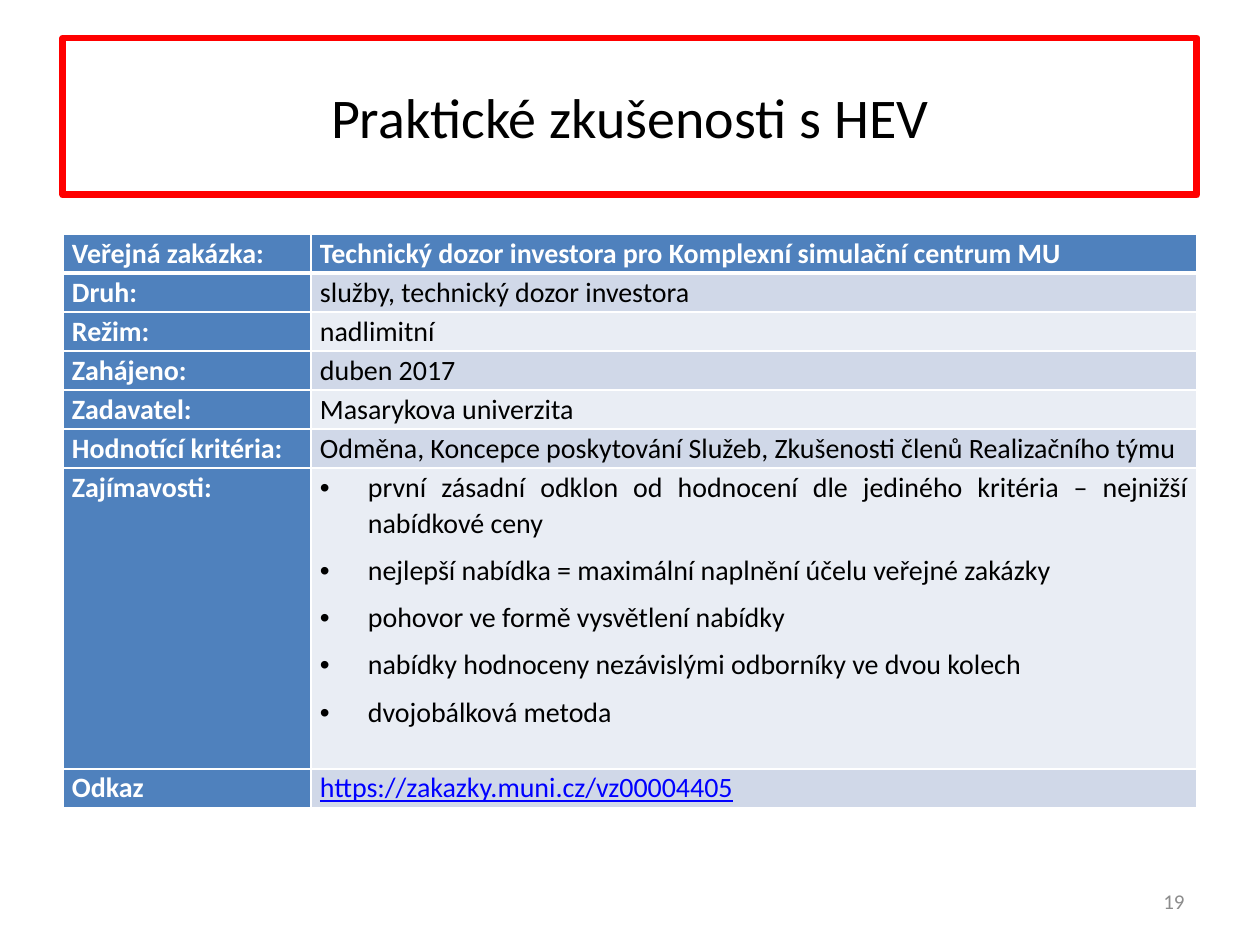
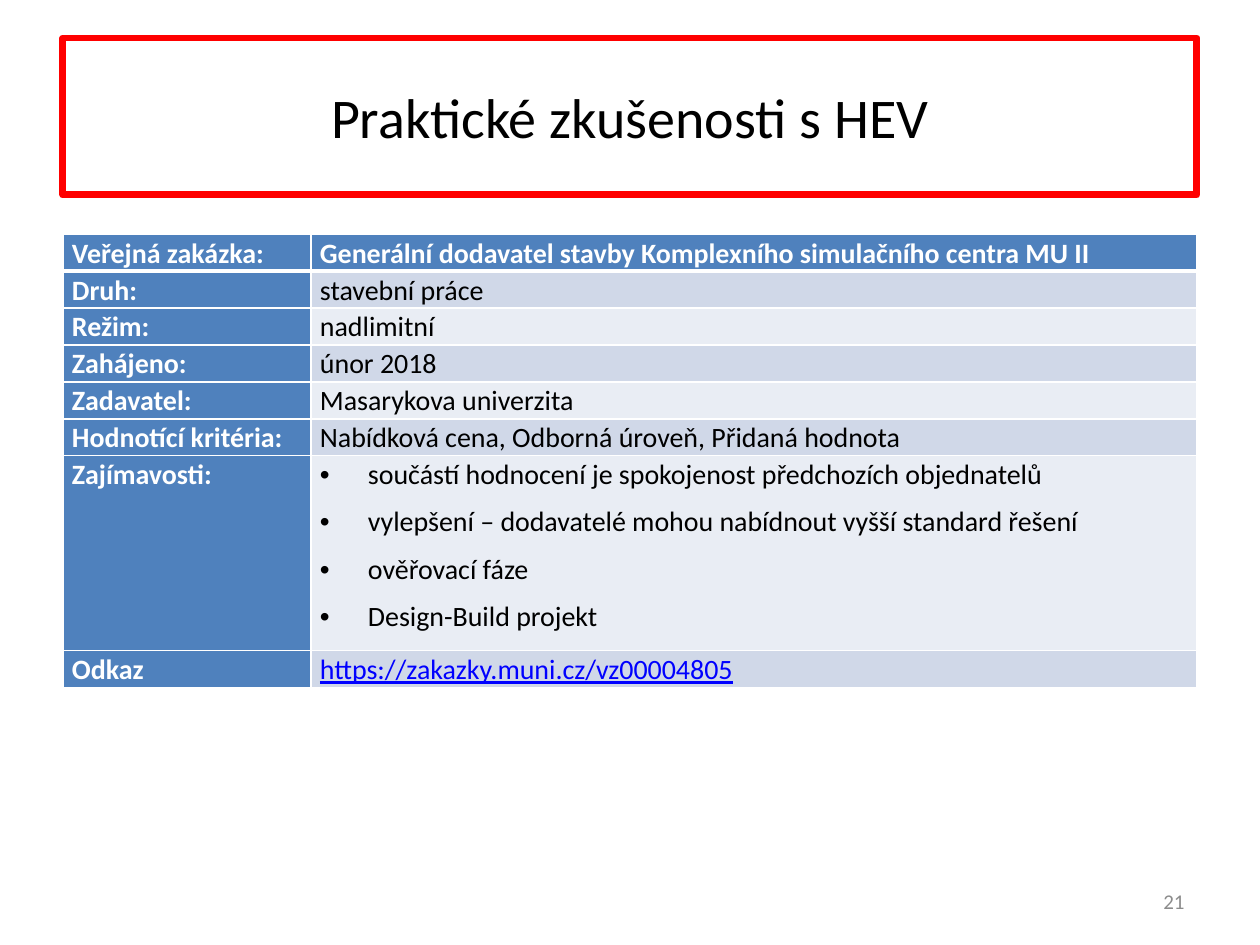
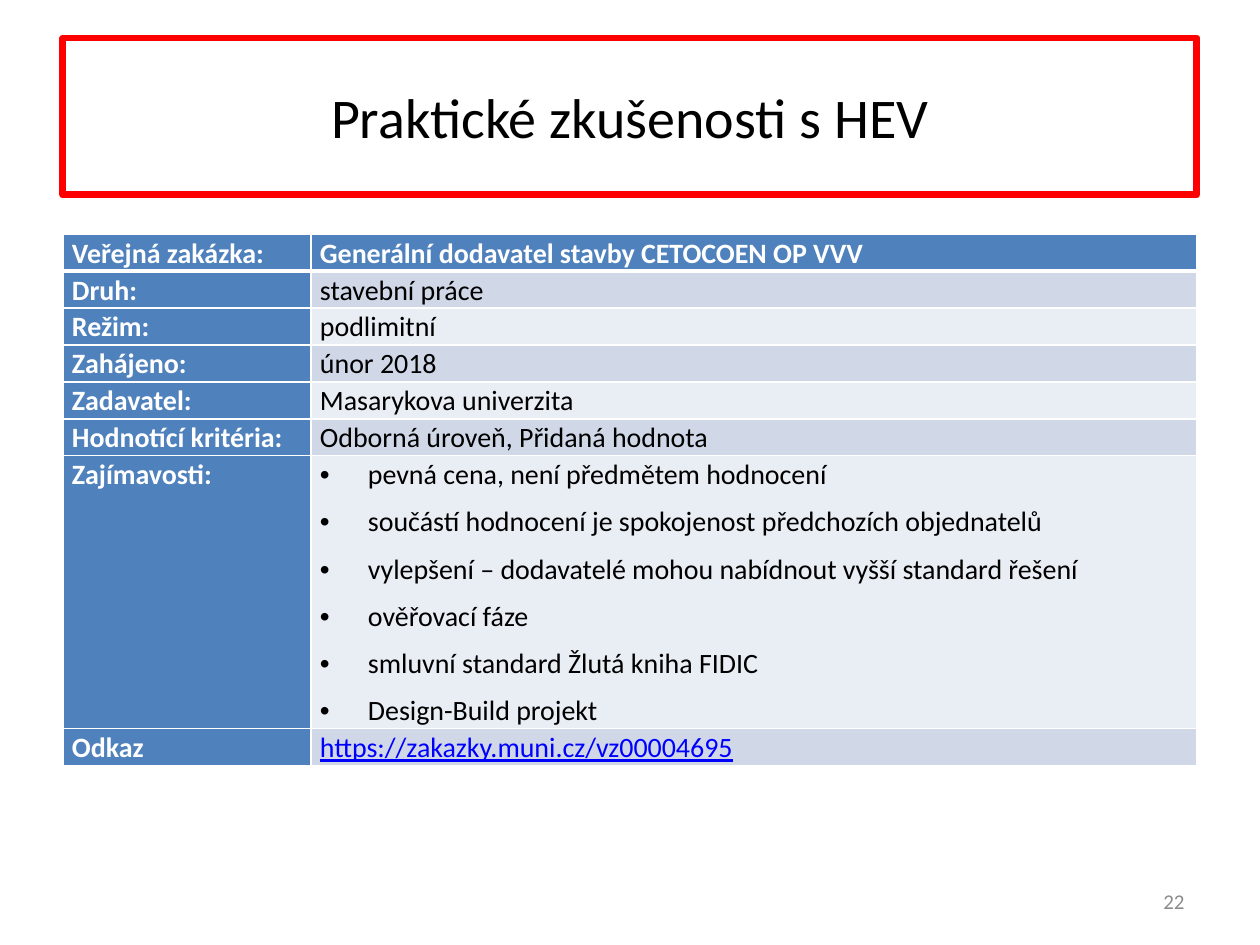
import lxml.etree
import pptx
import pptx.dml.color
import pptx.enum.shapes
import pptx.enum.text
import pptx.oxml.ns
import pptx.util

TITLE = "Praktické zkušenosti s HEV"
LABELS = [
    "Veřejná zakázka:", "Druh:", "Režim:", "Zahájeno:", "Zadavatel:",
    "Hodnotící kritéria:", "Zajímavosti:", "Odkaz",
]
TENDERS = [
    {
        "number": "19", "row_height": 39, "notes_height": 301,
        "values": [
            "Technický dozor investora pro Komplexní simulační centrum MU",
            "služby, technický dozor investora",
            "nadlimitní",
            "duben 2017",
            "Masarykova univerzita",
            "Odměna, Koncepce poskytování Služeb, Zkušenosti členů Realizačního týmu",
            [
                "první zásadní odklon od hodnocení dle jediného kritéria – nejnižší nabídkové ceny",
                "nejlepší nabídka = maximální naplnění účelu veřejné zakázky",
                "pohovor ve formě vysvětlení nabídky",
                "nabídky hodnoceny nezávislými odborníky ve dvou kolech",
                "dvojobálková metoda",
            ],
            "https://zakazky.muni.cz/vz00004405",
        ],
    },
    {
        "number": "21", "row_height": 37, "notes_height": 195,
        "values": [
            "Generální dodavatel stavby Komplexního simulačního centra MU II",
            "stavební práce",
            "nadlimitní",
            "únor 2018",
            "Masarykova univerzita",
            "Nabídková cena, Odborná úroveň, Přidaná hodnota",
            [
                "součástí hodnocení je spokojenost předchozích objednatelů",
                "vylepšení – dodavatelé mohou nabídnout vyšší standard řešení",
                "ověřovací fáze",
                "Design-Build projekt",
            ],
            "https://zakazky.muni.cz/vz00004805",
        ],
    },
    {
        "number": "22", "row_height": 37, "notes_height": 273,
        "values": [
            "Generální dodavatel stavby CETOCOEN OP VVV",
            "stavební práce",
            "podlimitní",
            "únor 2018",
            "Masarykova univerzita",
            "Odborná úroveň, Přidaná hodnota",
            [
                "pevná cena, není předmětem hodnocení",
                "součástí hodnocení je spokojenost předchozích objednatelů",
                "vylepšení – dodavatelé mohou nabídnout vyšší standard řešení",
                "ověřovací fáze",
                "smluvní standard Žlutá kniha FIDIC",
                "Design-Build projekt",
            ],
            "https://zakazky.muni.cz/vz00004695",
        ],
    },
]

COLORS = {
    "white": "FFFFFF", "black": "000000", "frame": "FF0000", "header": "4F81BD",
    "odd_band": "D0D8E8", "even_band": "E9EDF4", "link": "0000FF", "number": "8C8C8C",
}
FONT = "Calibri"
SLIDE_SIZE = (1260, 945)
TITLE_BOX = (63, 38, 1134, 157)
NUMBER_BOX = (903, 876, 294, 50)
TABLE_LEFT, TABLE_TOP = 63, 234
COLUMN_WIDTHS = (248, 886)
CELL_MARGIN = 9
BULLET_INDENT = 48
ALIGN = pptx.enum.text.PP_ALIGN


def px(length):
    return pptx.util.Emu(length * 914400 // 126)


def color(name):
    return pptx.dml.color.RGBColor.from_string(COLORS[name])


def format_paragraph(paragraph, size, color_name, alignment, bold=False, underline=False):
    paragraph.alignment = alignment
    for run in paragraph.runs:
        run.font.name = FONT
        run.font.size = pptx.util.Pt(size)
        run.font.bold = bold
        run.font.underline = underline
        run.font.color.rgb = color(color_name)


def fill_frame(shape, text, size, color_name, alignment):
    frame = shape.text_frame
    frame.word_wrap = True
    frame.vertical_anchor = pptx.enum.text.MSO_ANCHOR.MIDDLE
    frame.text = text
    format_paragraph(frame.paragraphs[0], size, color_name, alignment)


def add_title(slide):
    shape = slide.shapes.add_shape(
        pptx.enum.shapes.MSO_SHAPE.RECTANGLE, *map(px, TITLE_BOX))
    shape.shadow.inherit = False
    shape.fill.background()
    shape.line.color.rgb = color("frame")
    shape.line.width = pptx.util.Pt(4)
    fill_frame(shape, TITLE, 32, "black", ALIGN.CENTER)


def add_number(slide, number):
    box = slide.shapes.add_textbox(*map(px, NUMBER_BOX))
    fill_frame(box, number, 12, "number", ALIGN.RIGHT)


def add_child(parent, tag, **attributes):
    return lxml.etree.SubElement(parent, pptx.oxml.ns.qn(tag), **attributes)


def set_borders(cell, row):
    widths = {"L": 1, "R": 1, "T": 3 if row == 1 else 1, "B": 3 if row == 0 else 1}
    properties = cell._tc.get_or_add_tcPr()
    for side, points in widths.items():
        line = add_child(properties, f"a:ln{side}", w=str(pptx.util.Pt(points)))
        add_child(add_child(line, "a:solidFill"), "a:srgbClr", val=COLORS["white"])


def add_bullet(paragraph):
    properties = paragraph._p.get_or_add_pPr()
    properties.set("marL", str(px(BULLET_INDENT)))
    properties.set("indent", str(-px(BULLET_INDENT)))
    add_child(properties, "a:buFont", typeface="Arial")
    add_child(properties, "a:buChar", char="•")


def fill_cell(cell, row, content, is_header):
    set_borders(cell, row)
    cell.fill.solid()
    band = "odd_band" if row % 2 else "even_band"
    cell.fill.fore_color.rgb = color("header" if is_header else band)
    cell.margin_left = cell.margin_right = px(CELL_MARGIN)
    cell.margin_top = cell.margin_bottom = 0
    is_list = isinstance(content, list)
    is_link = not is_list and content.startswith("https://")
    text_color = "white" if is_header else "link" if is_link else "black"
    cell.text_frame.text = "\n".join(content) if is_list else content
    for index, paragraph in enumerate(cell.text_frame.paragraphs):
        if is_list:
            add_bullet(paragraph)
        paragraph.line_spacing = 1.07
        paragraph.space_before = pptx.util.Pt(3 if index else 0)
        paragraph.space_after = pptx.util.Pt(3)
        format_paragraph(paragraph, 16, text_color, ALIGN.JUSTIFY, is_header, is_link)


def add_tender_table(slide, tender):
    heights = [tender["notes_height"] if isinstance(value, list) else tender["row_height"]
               for value in tender["values"]]
    table = slide.shapes.add_table(
        len(LABELS), len(COLUMN_WIDTHS), px(TABLE_LEFT), px(TABLE_TOP),
        px(sum(COLUMN_WIDTHS)), px(sum(heights))).table
    for column, width in zip(table.columns, COLUMN_WIDTHS):
        column.width = px(width)
    for row, (label, value) in enumerate(zip(LABELS, tender["values"])):
        table.rows[row].height = px(heights[row])
        fill_cell(table.cell(row, 0), row, label, True)
        fill_cell(table.cell(row, 1), row, value, row == 0)


def main():
    presentation = pptx.Presentation()
    presentation.slide_width, presentation.slide_height = map(px, SLIDE_SIZE)
    for tender in TENDERS:
        slide = presentation.slides.add_slide(presentation.slide_layouts[6])
        add_title(slide)
        add_tender_table(slide, tender)
        add_number(slide, tender["number"])
    presentation.save("out.pptx")


if __name__ == "__main__":
    main()
